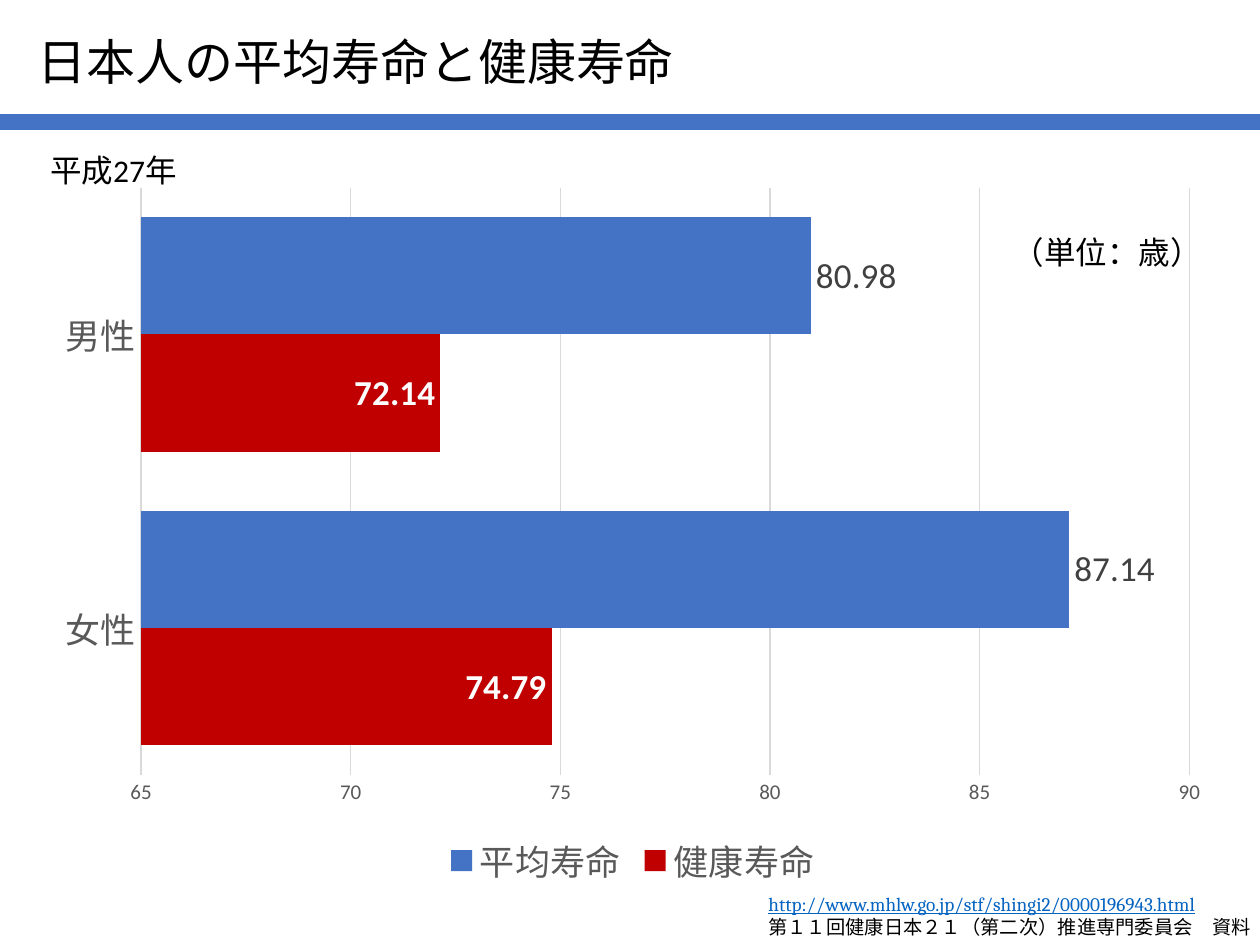
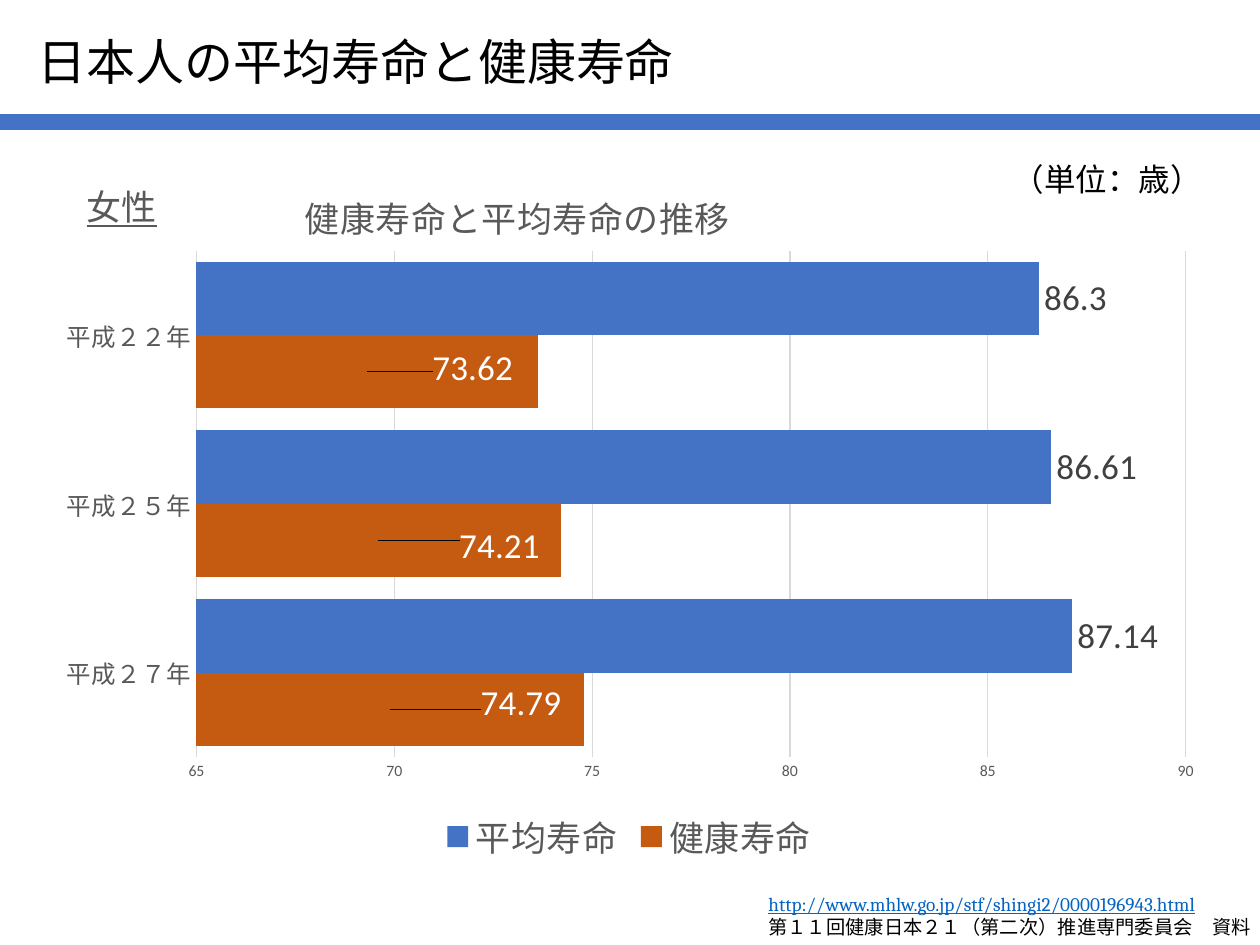
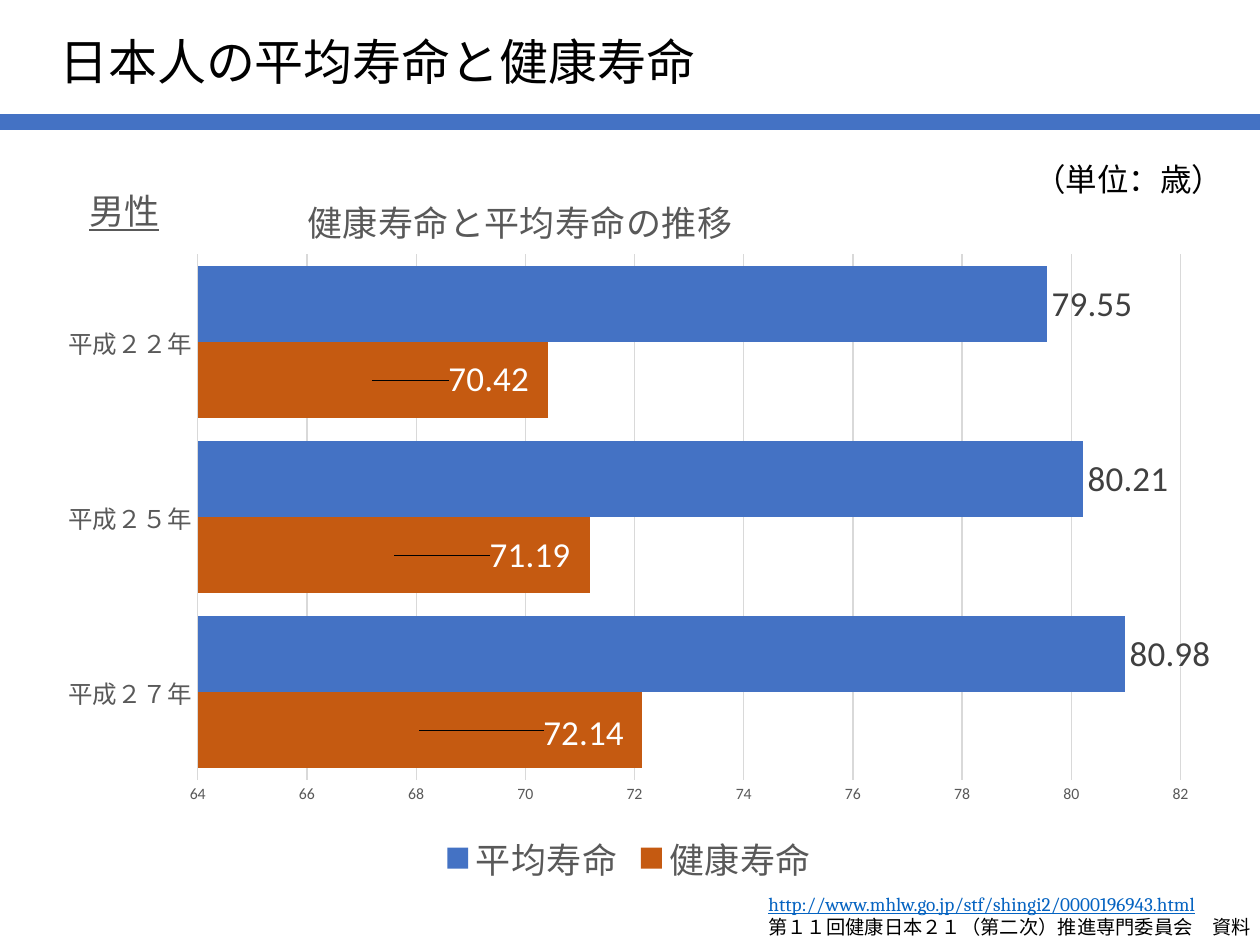
from dataclasses import dataclass
from typing import NamedTuple

from lxml import etree
from pptx import Presentation
from pptx.chart.data import CategoryChartData
from pptx.dml.color import RGBColor
from pptx.enum.chart import (
    XL_CHART_TYPE as ChartType,
    XL_LABEL_POSITION as LabelPos,
    XL_LEGEND_POSITION as LegendPos,
    XL_TICK_MARK as TickMark,
)
from pptx.enum.shapes import MSO_CONNECTOR as Connector
from pptx.enum.text import MSO_ANCHOR as Anchor, MSO_AUTO_SIZE as AutoSize, PP_ALIGN as Align
from pptx.oxml.ns import qn
from pptx.util import Inches, Pt

COLUMNS, ROWS = 100, 75
SLIDE_WIDTH, SLIDE_HEIGHT = Inches(10), Inches(7.5)
TITLE_ONLY = 5


@dataclass(frozen=True)
class Theme:
    black: str = "000000"
    white: str = "FFFFFF"
    blue: str = "4472C4"
    red: str = "C00000"
    orange: str = "C55A11"
    link: str = "0563C1"
    grey: str = "595959"
    dark_grey: str = "404040"
    grid: str = "D9D9D9"
    font: str = "Calibri"
    source_font: str = "Cambria"
    title: float = 28
    chart_text: float = 20
    note: float = 18
    category: float = 14
    scale: float = 12
    small_scale: float = 9
    source: float = 11
    band: float = 9
    hairline: float = 0.75


THEME = Theme()


class Box(NamedTuple):
    """A region in grid columns and rows."""
    col: float
    row: float
    cols: float
    rows: float

    def emu(self):
        x, y = SLIDE_WIDTH / COLUMNS, SLIDE_HEIGHT / ROWS
        return [round(v) for v in (self.col * x, self.row * y, self.cols * x, self.rows * y)]


@dataclass(frozen=True)
class BarStyle:
    healthy_color: str
    healthy_position: LabelPos
    healthy_bold: bool
    category_size: float
    scale_size: float
    gap: int


@dataclass(frozen=True)
class LifeChart:
    box: Box
    plot: Box
    categories: tuple
    healthy: tuple
    average: tuple
    scale: tuple
    style: BarStyle
    heading: str = ""
    heading_spot: tuple = ()
    label_shifts: tuple = ()


SEX_STYLE = BarStyle(THEME.red, LabelPos.INSIDE_END, True, THEME.chart_text, THEME.scale, 50)
TREND_STYLE = BarStyle(THEME.orange, LabelPos.CENTER, False, THEME.category, THEME.small_scale, 30)
YEARS = ("平成２７年", "平成２５年", "平成２２年")
TREND_HEADING = "健康寿命と平均寿命の推移"


def rgb(color):
    return RGBColor.from_string(color)


def set_font(font, size, color, name=THEME.font, bold=False, underline=False):
    font.name, font.size, font.bold = name, Pt(size), bold
    font.color.rgb = rgb(color)
    if underline:
        font.underline = True


def set_line(line, color, width):
    line.color.rgb = rgb(color)
    line.width = Pt(width)


def set_layout(parent, index, inner=False, **shares):
    """Give a chart part a manual layout, as shares of the chart area."""
    for old in parent.findall(qn("c:layout")):
        parent.remove(old)
    layout = etree.Element(qn("c:layout"))
    manual = etree.SubElement(layout, qn("c:manualLayout"))
    if inner:
        etree.SubElement(manual, qn("c:layoutTarget")).set("val", "inner")
    if parent.tag != qn("c:dLbl"):
        for mode in ("xMode", "yMode"):
            etree.SubElement(manual, qn(f"c:{mode}")).set("val", "edge")
    for key, share in shares.items():
        etree.SubElement(manual, qn(f"c:{key}")).set("val", f"{share:.4f}")
    parent.insert(index, layout)


def add_note(slide, box, text, size=THEME.note, color=THEME.black, underline=False):
    frame = slide.shapes.add_textbox(*box.emu()).text_frame
    frame.word_wrap = False
    frame.vertical_anchor = Anchor.MIDDLE
    frame.text = text
    set_font(frame.paragraphs[0].font, size, color, underline=underline)


def add_header(slide, box):
    title = slide.shapes.title
    title.left, title.top, title.width, title.height = box.emu()
    frame = title.text_frame
    frame.text = "日本人の平均寿命と健康寿命"
    frame.auto_size, frame.word_wrap = AutoSize.NONE, False
    frame.vertical_anchor = Anchor.MIDDLE
    frame.paragraphs[0].alignment = Align.LEFT
    set_font(frame.paragraphs[0].font, THEME.title, THEME.black)

    left, top, width, _ = Box(0, 9.7, COLUMNS, 0).emu()
    band = slide.shapes.add_connector(Connector.STRAIGHT, left, top, left + width, top)
    set_line(band.line, THEME.blue, THEME.band)
    etree.SubElement(band.line._get_or_add_ln().getparent(), qn("a:effectLst"))


def add_source(slide, box):
    frame = slide.shapes.add_textbox(*box.emu()).text_frame
    frame.word_wrap = True
    frame.text = ("http://www.mhlw.go.jp/stf/shingi2/0000196943.html\n"
                  "第１１回健康日本２１（第二次）推進専門委員会　資料")
    address, committee = frame.paragraphs
    for paragraph in frame.paragraphs:
        paragraph.alignment = Align.JUSTIFY
    set_font(address.font, THEME.source, THEME.link, THEME.source_font, underline=True)
    set_font(committee.font, THEME.source, THEME.black, THEME.source_font)


def format_axes(chart, life):
    category, value = chart.category_axis, chart.value_axis
    for axis, size in ((category, life.style.category_size), (value, life.style.scale_size)):
        axis.major_tick_mark = axis.minor_tick_mark = TickMark.NONE
        set_font(axis.tick_labels.font, size, THEME.grey)
    set_line(category.format.line, THEME.grid, THEME.hairline)
    value.format.line.fill.background()
    value.minimum_scale, value.maximum_scale, value.major_unit = life.scale
    value.has_major_gridlines = True
    set_line(value.major_gridlines.format.line, THEME.grid, THEME.hairline)


def format_series(series, color, label_color, position, bold=False):
    series.format.fill.solid()
    series.format.fill.fore_color.rgb = rgb(color)
    labels = series.data_labels
    labels.show_value, labels.position = True, position
    set_font(labels.font, THEME.chart_text, label_color, bold=bold)


def shift_labels(series, life):
    """Move each value label from the centre of its bar by columns and rows."""
    for index, (cols, rows) in enumerate(life.label_shifts):
        label = series.points[index].data_label
        set_font(label.font, THEME.chart_text, THEME.white)
        label.position = life.style.healthy_position
        element = series._element.xpath(f"c:dLbls/c:dLbl[c:idx/@val='{index}']")[0]
        set_layout(element, 1, x=cols / life.box.cols, y=rows / life.box.rows)


def add_heading(slide, chart, life):
    """Set the underlined group name beside the chart's own title."""
    col, middle = life.heading_spot
    add_note(slide, Box(life.box.col + 2.5, middle - 2, 8, 4), life.heading,
             THEME.chart_text, THEME.grey, underline=True)
    title = chart.chart_title
    title.text_frame.text = TREND_HEADING
    set_font(title.text_frame.paragraphs[0].font, THEME.chart_text, THEME.grey)
    set_layout(title._element, 1, x=(col - life.box.col) / life.box.cols,
               y=(middle - 2 - life.box.row) / life.box.rows)


def add_life_chart(slide, life):
    data = CategoryChartData()
    data.categories = life.categories
    data.add_series("健康寿命", life.healthy)
    data.add_series("平均寿命", life.average)
    chart = slide.shapes.add_chart(ChartType.BAR_CLUSTERED, *life.box.emu(), data).chart
    set_font(chart.font, 10, THEME.black)

    bars = chart.plots[0]
    bars.gap_width, bars.overlap, bars.vary_by_categories = life.style.gap, 0, False
    healthy, average = bars.series
    format_series(healthy, life.style.healthy_color, THEME.white,
                  life.style.healthy_position, life.style.healthy_bold)
    format_series(average, THEME.blue, THEME.dark_grey, LabelPos.OUTSIDE_END)
    shift_labels(healthy, life)
    format_axes(chart, life)

    chart.has_legend = True
    chart.legend.position = LegendPos.BOTTOM
    chart.legend.include_in_layout = False
    set_font(chart.legend.font, THEME.chart_text, THEME.grey)

    chart.has_title = bool(life.heading)
    if life.heading:
        add_heading(slide, chart, life)
    area, plot = life.box, life.plot
    set_layout(chart._chartSpace.chart.plotArea, 0, inner=True,
               x=(plot.col - area.col) / area.cols, y=(plot.row - area.row) / area.rows,
               w=plot.cols / area.cols, h=plot.rows / area.rows)


def add_life_slide(deck, life, title_col, unit_col, unit_row):
    slide = deck.slides.add_slide(deck.slide_layouts[TITLE_ONLY])
    add_header(slide, Box(title_col, 2, 56, 5.7))
    add_life_chart(slide, life)
    add_note(slide, Box(unit_col, unit_row, 17.3, 4), "（単位：歳）")
    add_source(slide, Box(60, 70.3, 41.4, 4.7))
    return slide


def main():
    deck = Presentation()
    deck.slide_width, deck.slide_height = SLIDE_WIDTH, SLIDE_HEIGHT

    by_sex = LifeChart(
        Box(3.3, 13.7, 93.9, 57.2), Box(11.2, 14.9, 83.2, 46.6),
        ("女性", "男性"), (74.79, 72.14), (87.14, 80.98), (65, 90, 5), SEX_STYLE)
    women = LifeChart(
        Box(3.4, 12, 93.1, 57), Box(15.6, 19.9, 78.5, 40.2),
        YEARS, (74.79, 74.21, 73.62), (87.14, 86.61, 86.3), (65, 90, 5), TREND_STYLE,
        "女性", (23.7, 16.4), ((10.4, -0.5), (9.6, 0.4), (8.4, -0.3)))
    men = LifeChart(
        Box(3.6, 12.3, 92.7, 58.4), Box(15.7, 20.2, 78, 41.7),
        YEARS, (72.14, 71.19, 70.42), (80.98, 80.21, 79.55), (64, 82, 2), TREND_STYLE,
        "男性", (23.9, 16.7), ((13, 0.2), (10.8, 0), (9.2, -0.1)))

    sex_slide = add_life_slide(deck, by_sex, 2, 79.4, 18)
    add_note(sex_slide, Box(3, 11.5, 13.3, 4), "平成27年")
    add_life_slide(deck, women, 2, 79.4, 12.2)
    add_life_slide(deck, men, 3.7, 81.1, 12.2)
    deck.save("out.pptx")


if __name__ == "__main__":
    main()
